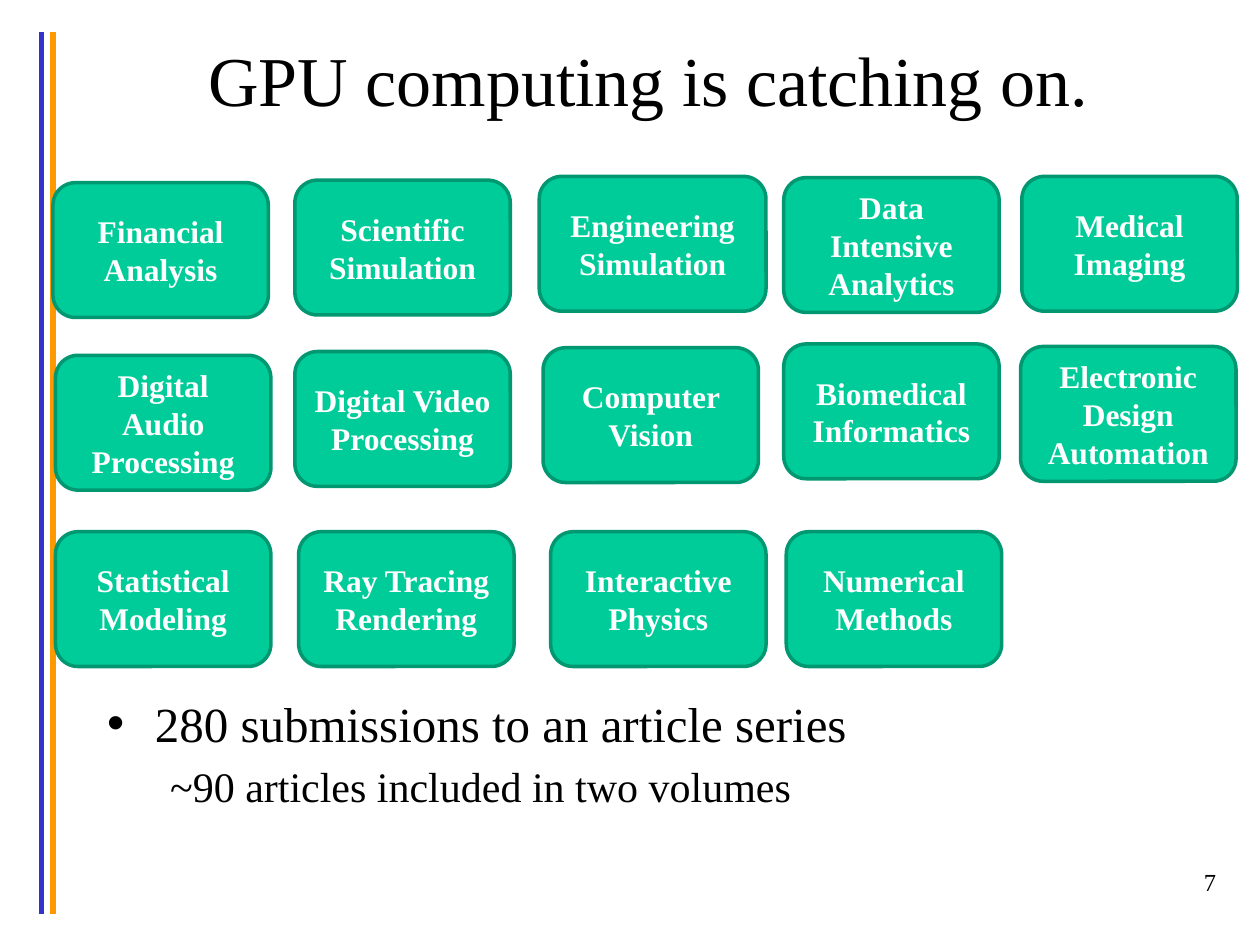
from lxml import etree
from pptx import Presentation
from pptx.dml.color import RGBColor
from pptx.enum.shapes import MSO_CONNECTOR, MSO_SHAPE
from pptx.enum.text import MSO_ANCHOR, MSO_AUTO_SIZE, PP_ALIGN
from pptx.oxml.ns import qn
from pptx.util import Inches, Pt

FONT = "Times New Roman"
BLACK, WHITE = "000000", "FFFFFF"
GREEN, EDGE = "00CC99", "009771"
LINE, ROUND = MSO_CONNECTOR.STRAIGHT, MSO_SHAPE.ROUNDED_RECTANGLE
MIDDLE, TOP, FIXED = MSO_ANCHOR.MIDDLE, MSO_ANCHOR.TOP, MSO_AUTO_SIZE.NONE
LEFT, CENTER, RIGHT = PP_ALIGN.LEFT, PP_ALIGN.CENTER, PP_ALIGN.RIGHT

WIDE, HIGH = 1.71, 1.07
TOPICS = [
    ("Financial Analysis", 0.42, 1.45, WIDE),
    ("Scientific Simulation", 2.34, 1.43, WIDE),
    ("Engineering Simulation", 4.28, 1.4, 1.8),
    ("Data Intensive Analytics", 6.22, 1.41, WIDE),
    ("Medical Imaging", 8.11, 1.4, WIDE),
    ("Digital Audio Processing", 0.44, 2.82, WIDE),
    ("Digital Video Processing", 2.34, 2.79, WIDE),
    ("Computer Vision", 4.31, 2.76, WIDE),
    ("Biomedical Informatics", 6.22, 2.73, WIDE),
    ("Electronic Design Automation", 8.1, 2.75, WIDE),
    ("Statistical Modeling", 0.44, 4.22, WIDE),
    ("Ray Tracing Rendering", 2.37, 4.22, WIDE),
    ("Interactive Physics", 4.37, 4.22, WIDE),
    ("Numerical Methods", 6.24, 4.22, WIDE),
]


def color(code):
    """Turn a hex string into a colour."""
    return RGBColor.from_string(code)


def place(shape, box):
    """Move a shape to a box given in inches."""
    shape.left, shape.top, shape.width, shape.height = map(Inches, box)


def style(para, size, code=BLACK, align=LEFT, bold=False):
    """Format a paragraph and its runs."""
    para.alignment = align
    for run in para.runs:
        font = run.font
        font.name, font.size, font.bold = FONT, Pt(size), bold
        font.color.rgb = color(code)


def add_rule(slide, x, top, end, code):
    """Draw one upright rule at the left edge."""
    rule = slide.shapes.add_connector(
        LINE, Inches(x), Inches(top), Inches(x), Inches(end))
    rule.line.color.rgb = color(code)
    rule.line.width = Pt(3)
    etree.SubElement(rule._element.spPr, qn("a:effectLst"))


def add_title(slide, box, text):
    """Fill the title placeholder."""
    title = slide.shapes.title
    place(title, box)
    frame = title.text_frame
    frame.text = text
    frame.vertical_anchor, frame.auto_size = MIDDLE, FIXED
    style(frame.paragraphs[0], 40, align=CENTER)


def add_body(slide, box, lead, detail):
    """Fill the body placeholder with a bullet and an unmarked line."""
    body = slide.placeholders[1]
    place(body, box)
    frame = body.text_frame
    frame.text = lead
    frame.vertical_anchor, frame.auto_size = TOP, FIXED
    first, second = frame.paragraphs[0], frame.add_paragraph()
    second.text, second.level = detail, 1
    style(first, 28)
    style(second, 24)
    for para, left, indent in ((first, 0.38, -0.38), (second, 0.5, 0)):
        props = para._p.get_or_add_pPr()
        props.set("marL", str(Inches(left)))
        props.set("indent", str(Inches(indent)))
    etree.SubElement(first._p.pPr, qn("a:buChar")).set("char", "•")
    etree.SubElement(second._p.pPr, qn("a:buNone"))


def add_topic(slide, box, text):
    """Draw one rounded topic tile."""
    tile = slide.shapes.add_shape(ROUND, *map(Inches, box))
    tile.shadow.inherit = False
    tile.fill.solid()
    tile.fill.fore_color.rgb = color(GREEN)
    tile.line.color.rgb = color(EDGE)
    tile.line.width = Pt(2)
    frame = tile.text_frame
    frame.text = text
    frame.word_wrap, frame.vertical_anchor = True, MIDDLE
    style(frame.paragraphs[0], 18, WHITE, CENTER, True)


def add_number(slide, box, text):
    """Write the page number."""
    frame = slide.shapes.add_textbox(*map(Inches, box)).text_frame
    frame.text = text
    frame.word_wrap = True
    style(frame.paragraphs[0], 14, align=RIGHT)


def main():
    """Build and save the slide."""
    deck = Presentation()
    deck.slide_width, deck.slide_height = Inches(10), Inches(7.5)
    slide = deck.slides.add_slide(deck.slide_layouts[1])
    add_rule(slide, 0.33, 0.25, 7.25, "3333CC")
    add_rule(slide, 0.42, 0.25, 7.25, "FF9900")
    add_title(slide, (0.29, 0, 9.71, 1.25), "GPU computing is catching on.")
    add_body(slide, (0.75, 5.45, 9.08, 1.22),
             "280 submissions to an article series",
             "~90 articles included in two volumes")
    for text, left, top, width in TOPICS:
        add_topic(slide, (left, top, width, HIGH), text)
    add_number(slide, (7.67, 6.83, 2.08, 0.5), "7")
    deck.save("out.pptx")


if __name__ == "__main__":
    main()
